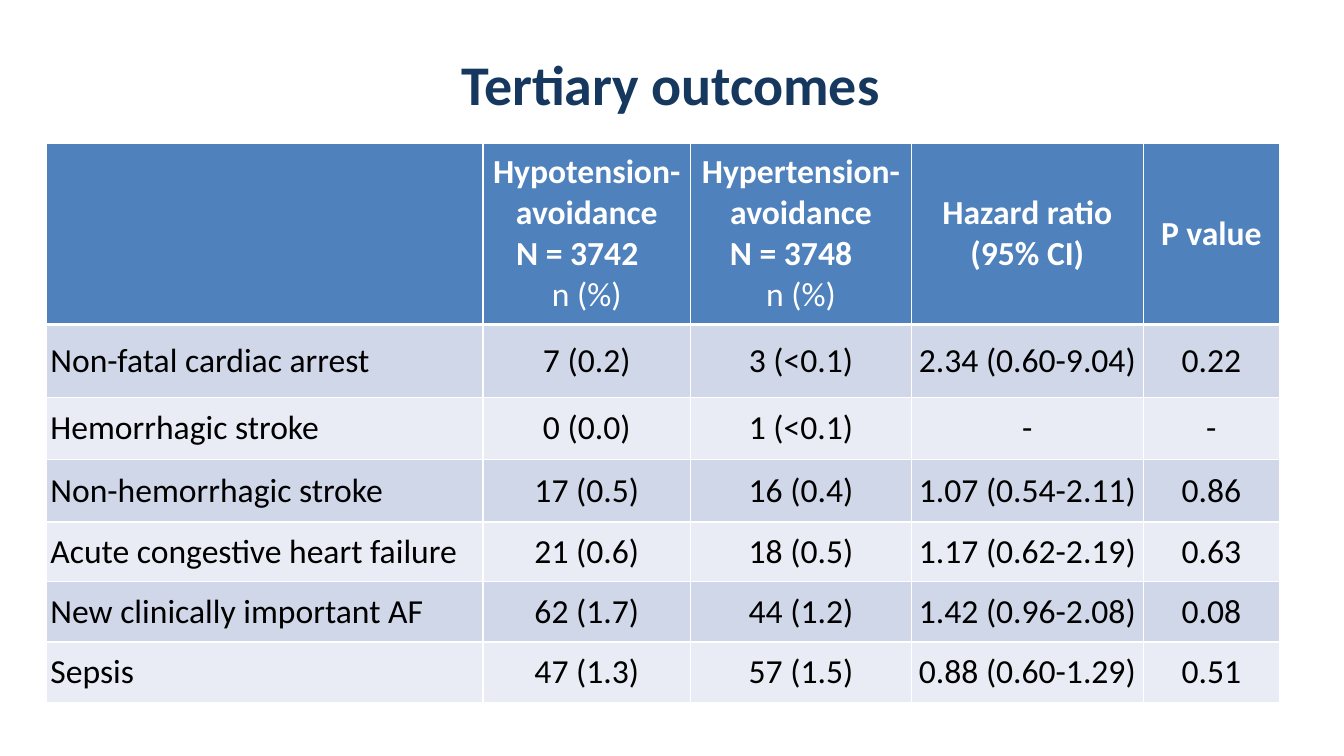
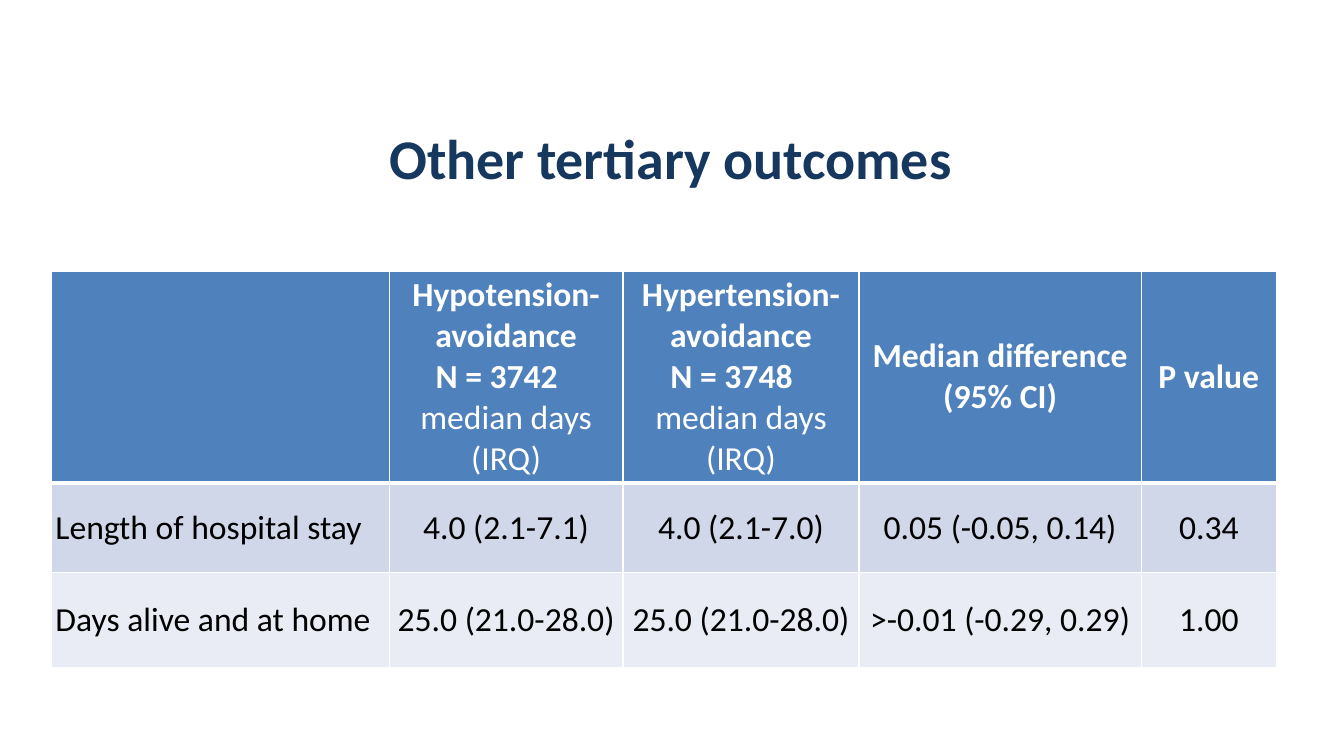
import pptx
import pptx.dml.color
import pptx.enum.text
import pptx.oxml.ns
import pptx.util
from lxml import etree

Inches, Pt = pptx.util.Inches, pptx.util.Pt
ALIGN = pptx.enum.text.PP_ALIGN
MIDDLE = pptx.enum.text.MSO_ANCHOR.MIDDLE

FONT = "Calibri"
TITLE_SIZE, TABLE_SIZE = 40, 24
NAVY, WHITE, BLACK = "16375E", "FFFFFF", "000000"
HEADER_FILL = "4F81BC"
BAND_FILLS = ("D0D7E8", "E9ECF4")
THIN, THICK = 1, 3
LABEL_INDENT = 0.04


def group_header(name, patients, count_indent, measure):
    """Header lines as (text, bold, indent); an indent of None means centred."""
    return [(f"{name}-", True, None), ("avoidance", True, None),
            (f"N = {patients}", True, count_indent)] + [
            (line, False, None) for line in measure]


def plain_header(*lines):
    return [(line, True, None) for line in lines]


SLIDES = [
    {
        "title": "Tertiary outcomes",
        "title_top": 0.45,
        "table_at": (0.46, 1.42),
        "columns": (4.33, 2.06, 2.19, 2.3, 1.35),
        "heights": (1.8, 0.72, 0.62, 0.62, 0.59, 0.6, 0.6),
        "header": [
            [],
            group_header("Hypotension", 3742, 0.33, ["n (%)"]),
            group_header("Hypertension", 3748, 0.39, ["n (%)"]),
            plain_header("Hazard ratio", "(95% CI)"),
            plain_header("P value"),
        ],
        "rows": [
            ("Non-fatal cardiac arrest", "7 (0.2)", "3 (<0.1)", "2.34 (0.60-9.04)", "0.22"),
            ("Hemorrhagic stroke", "0 (0.0)", "1 (<0.1)", "-", "-"),
            ("Non-hemorrhagic stroke", "17 (0.5)", "16 (0.4)", "1.07 (0.54-2.11)", "0.86"),
            ("Acute congestive heart failure", "21 (0.6)", "18 (0.5)", "1.17 (0.62-2.19)", "0.63"),
            ("New clinically important AF", "62 (1.7)", "44 (1.2)", "1.42 (0.96-2.08)", "0.08"),
            ("Sepsis", "47 (1.3)", "57 (1.5)", "0.88 (0.60-1.29)", "0.51"),
        ],
    },
    {
        "title": "Other tertiary outcomes",
        "title_top": 1.18,
        "table_at": (0.51, 2.69),
        "columns": (3.35, 2.32, 2.34, 2.8, 1.34),
        "heights": (2.1, 0.89, 0.94),
        "header": [
            [],
            group_header("Hypotension", 3742, 0.46, ["median days", "(IRQ)"]),
            group_header("Hypertension", 3748, 0.47, ["median days", "(IRQ)"]),
            plain_header("Median difference", "(95% CI)"),
            plain_header("P value"),
        ],
        "rows": [
            ("Length of hospital stay", "4.0 (2.1-7.1)", "4.0 (2.1-7.0)",
             "0.05 (-0.05, 0.14)", "0.34"),
            ("Days alive and at home", "25.0 (21.0-28.0)", "25.0 (21.0-28.0)",
             ">-0.01 (-0.29, 0.29)", "1.00"),
        ],
    },
]


def rgb(color):
    return pptx.dml.color.RGBColor.from_string(color)


def style_font(para, size, color, bold):
    font = para.font
    font.name, font.size, font.bold = FONT, Pt(size), bold
    font.color.rgb = rgb(color)


def set_borders(cell, **widths):
    """Draw white borders; widths in points are keyed by side: L, R, T, B."""
    qn = pptx.oxml.ns.qn
    properties = cell._tc.get_or_add_tcPr()
    for side, width in widths.items():
        line = etree.SubElement(properties, qn(f"a:ln{side}"), w=str(Pt(width)))
        fill = etree.SubElement(line, qn("a:solidFill"))
        etree.SubElement(fill, qn("a:srgbClr"), val=WHITE)


def fill_cell(cell, lines, color):
    """Write lines of (text, bold, indent) into a cell, vertically centred."""
    cell.margin_left = cell.margin_right = cell.margin_top = cell.margin_bottom = 0
    cell.vertical_anchor = MIDDLE
    frame = cell.text_frame
    for number, (text, bold, indent) in enumerate(lines):
        para = frame.add_paragraph() if number else frame.paragraphs[0]
        para.text = text
        style_font(para, TABLE_SIZE, color, bold)
        if indent is None:
            para.alignment = ALIGN.CENTER
        else:
            para.alignment = ALIGN.LEFT
            para._p.get_or_add_pPr().set("marL", str(Inches(indent)))


def add_title(page, text, top):
    title = page.shapes.title
    title.left, title.top = 0, Inches(top)
    title.width, title.height = Inches(13.3), Inches(0.75)
    frame = title.text_frame
    frame.margin_top = frame.margin_bottom = 0
    frame.vertical_anchor = MIDDLE
    frame.text = text
    para = frame.paragraphs[0]
    para.alignment = ALIGN.CENTER
    style_font(para, TITLE_SIZE, NAVY, True)


def add_outcome_table(page, content):
    columns, heights = content["columns"], content["heights"]
    left, top = content["table_at"]
    table = page.shapes.add_table(
        len(heights), len(columns), Inches(left), Inches(top),
        Inches(sum(columns)), Inches(sum(heights))).table
    for column, width in zip(table.columns, columns):
        column.width = Inches(width)
    for row, height in zip(table.rows, heights):
        row.height = Inches(height)

    body = [[[(text, False, None if column else LABEL_INDENT)]
             for column, text in enumerate(row)] for row in content["rows"]]
    for row, cells in enumerate([content["header"]] + body):
        is_header = row == 0
        for column, lines in enumerate(cells):
            cell = table.cell(row, column)
            fill_cell(cell, lines, WHITE if is_header else BLACK)
            set_borders(cell, L=THIN, R=THIN,
                        T=THICK if row == 1 else THIN,
                        B=THICK if is_header else THIN)
            cell.fill.solid()
            cell.fill.fore_color.rgb = rgb(
                HEADER_FILL if is_header else BAND_FILLS[(row - 1) % 2])


def main():
    deck = pptx.Presentation()
    deck.slide_width, deck.slide_height = Inches(13.33), Inches(7.5)
    title_only = deck.slide_layouts.get_by_name("Title Only")
    for content in SLIDES:
        page = deck.slides.add_slide(title_only)
        add_title(page, content["title"], content["title_top"])
        add_outcome_table(page, content)
    deck.save("out.pptx")


if __name__ == "__main__":
    main()
